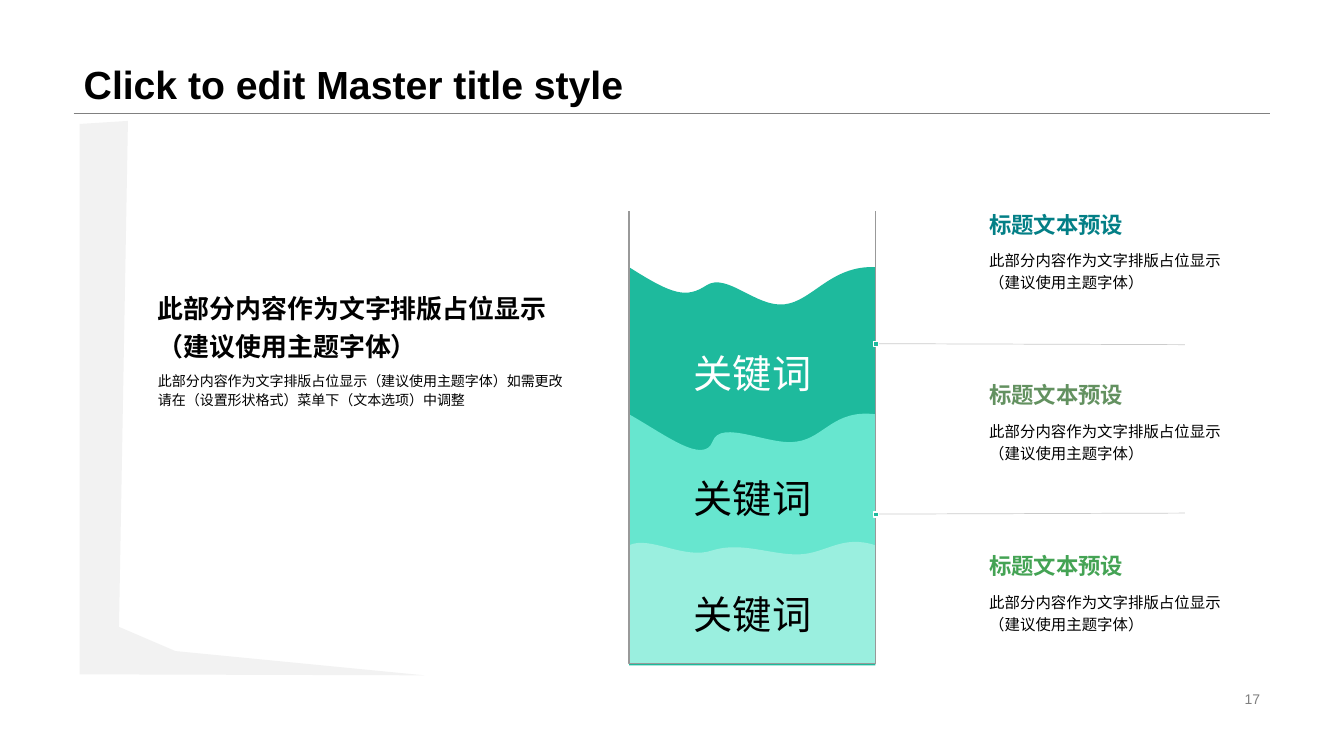
import pptx
import pptx.util
import pptx.dml.color
import pptx.enum.shapes
import pptx.enum.text
import pptx.oxml.ns
from lxml import etree

Pt = pptx.util.Pt
qn = pptx.oxml.ns.qn
ALIGN = pptx.enum.text.PP_ALIGN
ANCHOR = pptx.enum.text.MSO_ANCHOR

COLORS = {
    "black": "000000", "white": "FFFFFF", "number": "808080", "rule": "808080",
    "tube": "999999", "divider": "CCCCCC", "corner": "F2F2F2",
    "deep": "1EBA9D", "middle": "67E6CF", "light": "9AEFDF",
    "teal": "037F86", "olive": "639160", "green": "44A354",
}

TITLE = "Click to edit Master title style"
PAGE_NUMBER = "17"
PLACEHOLDER_TEXT = "此部分内容作为文字排版占位显示\v（建议使用主题字体）"
LEAD_DETAIL = ("此部分内容作为文字排版占位显示（建议使用主题字体）"
               "如需更改请在（设置形状格式）菜单下（文本选项）中调整")
KEYWORDS = [  # text, top, colour
    ("关键词", 243, "white"),
    ("关键词", 332.6, "black"),
    ("关键词", 415.4, "black"),
]
NOTES = [  # heading, colour, detail
    ("标题文本预设", "teal", PLACEHOLDER_TEXT),
    ("标题文本预设", "olive", PLACEHOLDER_TEXT),
    ("标题文本预设", "green", PLACEHOLDER_TEXT),
]

TUBE_LEFT, TUBE_RIGHT, TUBE_TOP, TUBE_BOTTOM = 449.3, 625.3, 150.9, 473.8
# Each wave: colour, floor, then a start point followed by three points per curve
WAVES = [
    ("deep", 475.2, [(449.3, 190.8), (481, 211), (490.3, 213.1), (504.7, 203.8),
                     (519.1, 194.4), (540, 219.6), (560.2, 217.4),
                     (580.3, 215.3), (593.3, 189.4), (625.3, 190.8)]),
    ("middle", TUBE_BOTTOM, [(449.3, 295.9), (475.9, 311), (502.6, 331.9), (509, 315.4),
                             (514.8, 298.8), (550.1, 319), (569.5, 315.4),
                             (589, 312.5), (595.4, 292.3), (625.3, 295.9)]),
    ("light", TUBE_BOTTOM, [(449.3, 389.5), (464.4, 382.3), (488.9, 400.3), (509, 393.1),
                            (529.9, 386.6), (551.5, 396.7), (571, 396),
                            (590.4, 395.3), (601.2, 381.6), (625.3, 389.5)]),
]
CORNER = [(56.9, 88.6), (91.4, 86.4), (85, 447.8), (125.3, 465.1), (303.1, 482.4), (56.9, 481.7)]

NOTE_LEFT, NOTE_TOP, NOTE_WIDTH, NOTE_STEP = 699.5, 147.7, 203, 122
HEADING_HEIGHT, DETAIL_HEIGHT = 25.5, 56.9
DIVIDER_LEFT, DIVIDER_RIGHT = 627.4, 846.4
DIVIDERS = [(245.5, 246.2), (367.2, 366.5)]  # height at left end, at right end
MARKER = 3.6


def color(name):
    return pptx.dml.color.RGBColor.from_string(COLORS[name])


def format_text(box, text, size, ink, bold=False, align=ALIGN.LEFT,
                anchor=ANCHOR.MIDDLE, spacing=None, wrap=True):
    frame = box.text_frame
    frame.word_wrap = wrap
    frame.auto_size = pptx.enum.text.MSO_AUTO_SIZE.NONE
    frame.vertical_anchor = anchor
    para = frame.paragraphs[0]
    para.text = text
    para.alignment = align
    para.line_spacing = spacing
    para.font.name = "Arial"
    para.font.size = Pt(size)
    para.font.bold = bold
    para.font.color.rgb = color(ink)


def add_text(page, left, top, width, height, *args, **style):
    box = page.shapes.add_textbox(Pt(left), Pt(top), Pt(width), Pt(height))
    format_text(box, *args, **style)


def add_line(page, start, end, ink, width):
    line = page.shapes.add_connector(
        pptx.enum.shapes.MSO_CONNECTOR.STRAIGHT, *(Pt(value) for value in start + end))
    line.line.color.rgb = color(ink)
    line.line.width = Pt(width)
    etree.SubElement(line._element.spPr, qn("a:effectLst"))


def add_outline(page, points, fill=None, ink=None):
    """Draw a closed filled area, or an open stroke when there is no fill."""
    spots = [(Pt(x), Pt(y)) for x, y in points]
    builder = page.shapes.build_freeform(*spots[0], scale=1.0)
    builder.add_line_segments(spots[1:], close=fill is not None)
    shape = builder.convert_to_shape()
    paint(shape, fill, ink)
    return shape


def paint(shape, fill, ink):
    shape.shadow.inherit = False
    if fill:
        shape.fill.solid()
        shape.fill.fore_color.rgb = color(fill)
    else:
        shape.fill.background()
    if ink:
        shape.line.color.rgb = color(ink)
        shape.line.width = Pt(1)
    else:
        shape.line.fill.background()


def add_wave(page, fill, floor, points):
    """Outline the wave through its curve ends, then bend its top sides into curves."""
    ends = points[::3]
    corners = [(ends[-1][0], floor), (ends[0][0], floor)]
    shape = add_outline(page, ends + corners, fill=fill)
    sides = list(shape._element.iter(qn("a:lnTo")))
    for index, side in enumerate(sides[:len(ends) - 1]):
        side.tag = qn("a:cubicBezTo")
        for place, (x, y) in enumerate(points[3 * index + 1:3 * index + 3]):
            control = etree.Element(qn("a:pt"), x=str(Pt(x) - shape.left),
                                    y=str(Pt(y) - shape.top))
            side.insert(place, control)


def add_tube(page):
    for wave in WAVES:
        add_wave(page, *wave)
    add_outline(page, [(TUBE_RIGHT, TUBE_TOP), (TUBE_RIGHT, TUBE_BOTTOM),
                       (TUBE_LEFT, TUBE_BOTTOM), (TUBE_LEFT, TUBE_TOP)], ink="tube")
    for text, top, ink in KEYWORDS:
        add_text(page, 478.1, top, 118.8, 46.1, text, 28, ink,
                 align=ALIGN.CENTER, wrap=False)


def add_notes(page):
    for row, (heading, ink, detail) in enumerate(NOTES):
        top = NOTE_TOP + row * NOTE_STEP
        add_text(page, NOTE_LEFT, top, NOTE_WIDTH, HEADING_HEIGHT, heading, 16, ink,
                 bold=True, anchor=ANCHOR.BOTTOM, wrap=False)
        add_text(page, NOTE_LEFT, top + HEADING_HEIGHT, NOTE_WIDTH, DETAIL_HEIGHT,
                 detail, 11, "black", anchor=ANCHOR.TOP, spacing=1.2)
    for start, end in DIVIDERS:
        add_line(page, (DIVIDER_LEFT, start), (DIVIDER_RIGHT, end), "divider", 0.5)
        marker = page.shapes.add_shape(
            pptx.enum.shapes.MSO_SHAPE.RECTANGLE, Pt(TUBE_RIGHT + 0.3 - MARKER / 2),
            Pt(start + 0.3 - MARKER / 2), Pt(MARKER), Pt(MARKER))
        paint(marker, "deep", "white")


def main():
    deck = pptx.Presentation()
    deck.slide_width, deck.slide_height = Pt(960), Pt(540)
    page = deck.slides.add_slide(deck.slide_layouts.get_by_name("Title Only"))

    title = page.shapes.title
    title.left, title.top, title.width, title.height = Pt(52.6), Pt(0), Pt(854.6), Pt(80.9)
    format_text(title, TITLE, 28, "black", bold=True, anchor=ANCHOR.BOTTOM, spacing=0.9)
    add_line(page, (52.6, 80.9), (907.2, 80.9), "rule", 0.25)
    add_text(page, 678.2, 491, 229, 16.6, PAGE_NUMBER, 10, "number", align=ALIGN.RIGHT)

    add_tube(page)
    add_notes(page)
    add_outline(page, CORNER, fill="corner")
    add_text(page, 105.8, 201.6, 306.7, 59.8, PLACEHOLDER_TEXT, 18.5, "black",
             bold=True, spacing=1.2)
    add_text(page, 105.8, 261.4, 306.7, 33.8, LEAD_DETAIL, 10, "black", spacing=1.1)
    deck.save("out.pptx")


if __name__ == "__main__":
    main()
